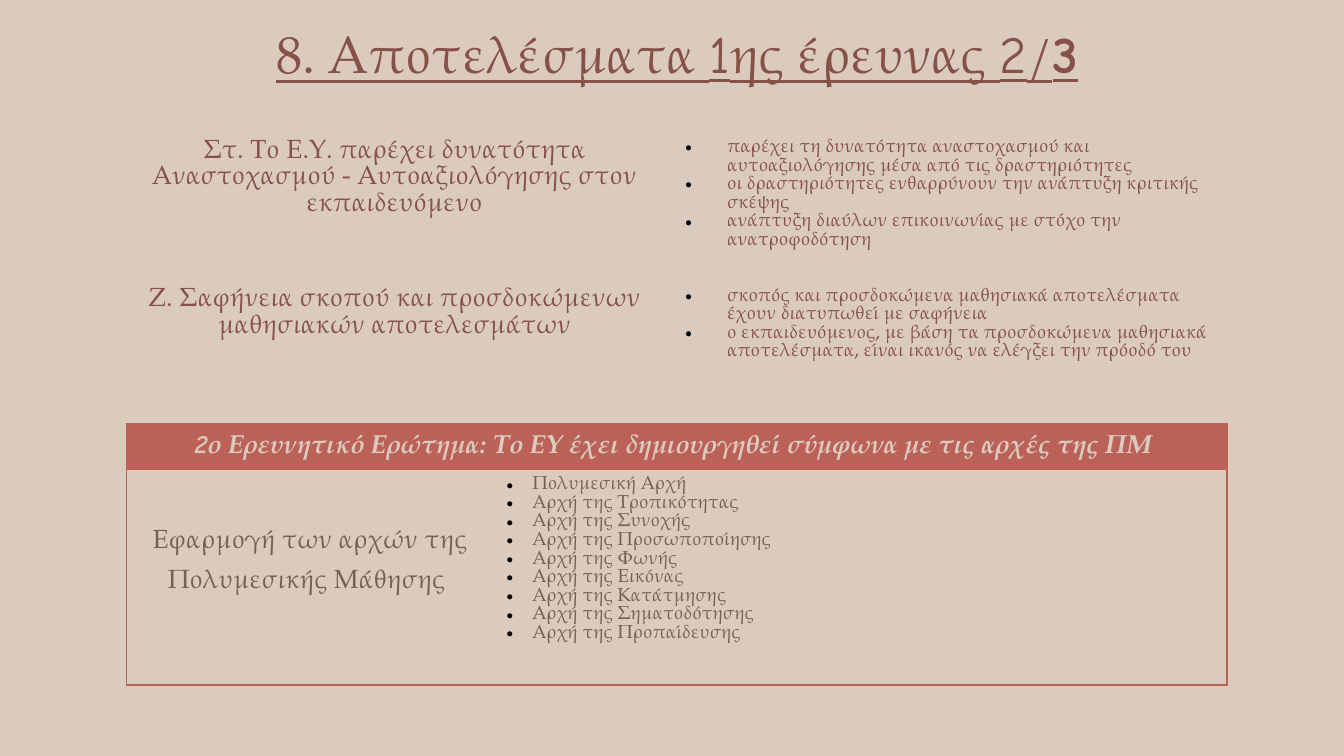
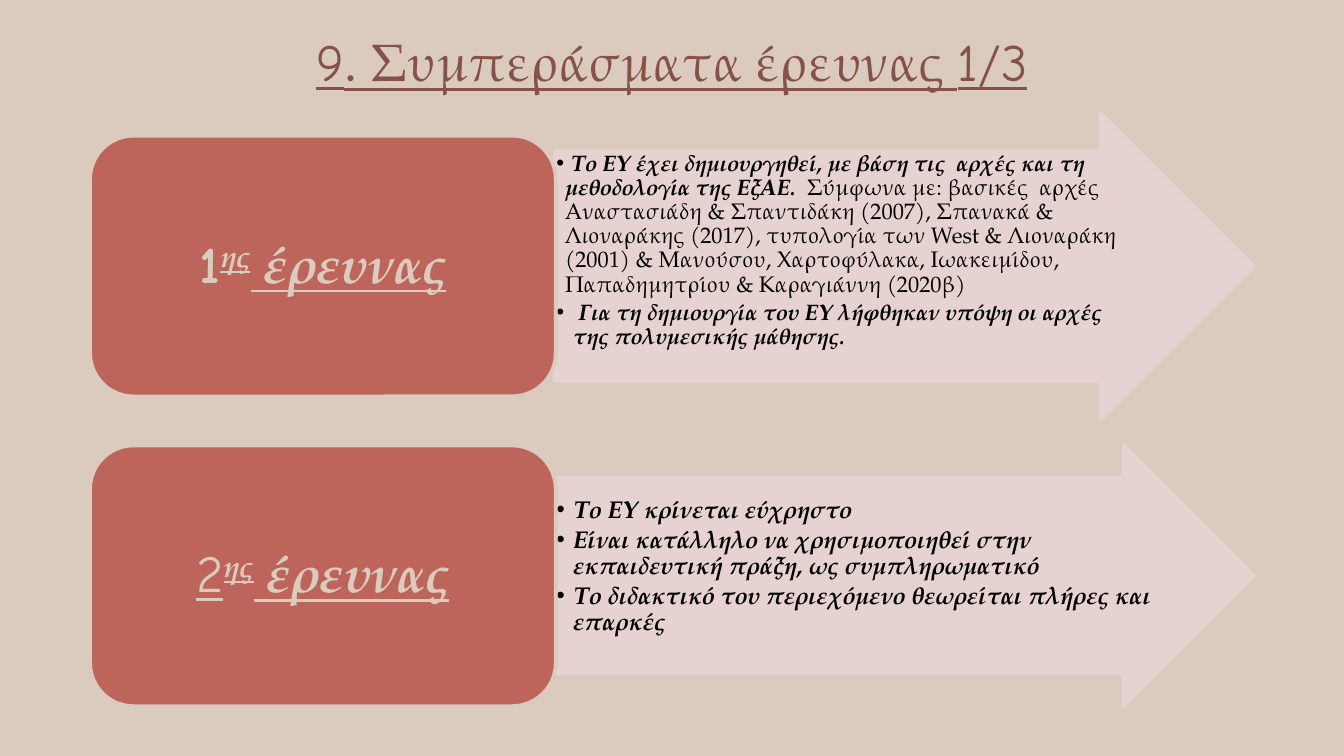
from dataclasses import dataclass, field
from typing import Optional

from lxml.etree import SubElement
from pptx import Presentation
from pptx.dml.color import RGBColor
from pptx.enum.shapes import MSO_SHAPE as Shape
from pptx.enum.text import MSO_ANCHOR as Anchor, MSO_AUTO_SIZE as AutoSize, PP_ALIGN as Align
from pptx.oxml.ns import qn
from pptx.util import Emu, Pt

PX = 4572
SERIF, COMIC = "TeX Gyre Pagella", "Comic Neue"
PLAIN_TABLE = "{2D5ABB26-0587-4C30-8999-92F81FD0307C}"
COLORS = {
    "sand": "DBCABE",
    "wine": "865147",
    "brown": "78604F",
    "rust": "BC6157",
    "brick": "BE655B",
    "blush": "E8D3D2",
    "black": "000000",
}


@dataclass
class Span:
    """A stretch of text with one look."""
    text: str
    font: str = SERIF
    bold: bool = False
    italic: bool = False
    underline: bool = False
    raised: bool = False


@dataclass
class Para:
    """A paragraph of spans sharing size and colour."""
    spans: list[Span]
    size: int
    color: str
    centered: bool = False
    indent: int = 0
    spacing: Optional[float] = None
    after: int = 0


@dataclass
class Finding:
    """One study: a rounded label and an arrow holding its conclusions."""
    top: int
    label: list[Span]
    arrow_top: int
    arrow_height: int
    text_top: int
    text_width: int
    text_height: int
    points: list[Para] = field(default_factory=list)


def px(value: int) -> Emu:
    """Turn px into EMU."""
    return Emu(value * PX)


def rgb(name: str) -> RGBColor:
    """Look up a named colour."""
    return RGBColor.from_string(COLORS[name])


def add_bullet(para, indent: int) -> None:
    """Give a paragraph a hanging black bullet."""
    props = para._p.get_or_add_pPr()
    props.set("marL", str(px(indent)))
    props.set("indent", str(px(-indent)))
    color = SubElement(props, qn("a:buClr"))
    SubElement(color, qn("a:srgbClr"), val=COLORS["black"])
    SubElement(props, qn("a:buFont"), typeface="Arial")
    SubElement(props, qn("a:buChar"), char="•")


def write(frame, paras: list[Para]) -> None:
    """Fill a text frame with paragraphs."""
    for number, spec in enumerate(paras):
        para = frame.add_paragraph() if number else frame.paragraphs[0]
        if spec.indent:
            add_bullet(para, spec.indent)
        para.alignment = Align.CENTER if spec.centered else Align.LEFT
        if spec.spacing:
            para.line_spacing = spec.spacing
        para.space_after = Pt(spec.after)
        for part in spec.spans:
            span = para.add_run()
            span.text = part.text
            font = span.font
            font.name, font.size = part.font, Pt(spec.size)
            font.bold, font.italic, font.underline = part.bold, part.italic, part.underline
            font.color.rgb = rgb(spec.color)
            if part.raised:
                span._r.get_or_add_rPr().set("baseline", "30000")


def add_text(page, at: tuple, paras: list[Para], margins: tuple = (20, 10),
             anchor=Anchor.TOP, grow: bool = False) -> None:
    """Add a wrapping text box."""
    frame = page.shapes.add_textbox(*map(px, at)).text_frame
    frame.word_wrap = True
    frame.auto_size = AutoSize.SHAPE_TO_FIT_TEXT if grow else AutoSize.NONE
    frame.margin_left = frame.margin_right = px(margins[0])
    frame.margin_top = frame.margin_bottom = px(margins[1])
    frame.vertical_anchor = anchor
    write(frame, paras)


def add_page(deck, at: tuple, title: list[Span]):
    """Add a sand page with its underlined title."""
    page = deck.slides.add_slide(deck.slide_layouts[6])
    page.background.fill.solid()
    page.background.fill.fore_color.rgb = rgb("sand")
    for span in title:
        span.underline = True
    add_text(page, at, [Para(title, 28, "wine", centered=True)], grow=True)
    return page


def add_block(page, kind, at: tuple, fill: str, line: str, alpha: int = 100):
    """Add a filled and outlined preset shape."""
    block = page.shapes.add_shape(kind, *map(px, at))
    block.shadow.inherit = False
    block.fill.solid()
    block.fill.fore_color.rgb = rgb(fill)
    block.line.color.rgb = rgb(line)
    block.line.width = Pt(2)
    if alpha < 100:
        for color in block._element.spPr.iter(qn("a:srgbClr")):
            SubElement(color, qn("a:alpha"), val=str(alpha * 1000))
    return block


def add_grid(page, at: tuple, columns: list[int], rows: list[int]):
    """Add a table without style, fills or borders."""
    width, height = sum(columns), sum(rows)
    grid = page.shapes.add_table(len(rows), len(columns), *map(px, (*at, width, height))).table
    grid.first_row = grid.horz_banding = False
    grid._tbl.tblPr.find(qn("a:tableStyleId")).text = PLAIN_TABLE
    for column, size in zip(grid.columns, columns):
        column.width = px(size)
    for row, size in zip(grid.rows, rows):
        row.height = px(size)
    for cell in grid.iter_cells():
        cell.fill.background()
    return grid


def add_borders(cell, sides: str) -> None:
    """Draw thin rust borders on the sides named by L, R, T, B."""
    props = cell._tc.get_or_add_tcPr()
    for place, side in enumerate(sides):
        line = SubElement(props, qn(f"a:ln{side}"), w=str(Pt(0.75)))
        fill = SubElement(line, qn("a:solidFill"))
        SubElement(fill, qn("a:srgbClr"), val=COLORS["rust"])
        props.insert(place, line)


def bullets(texts: list[str], color: str, indent: int) -> list[Para]:
    """Make small bulleted paragraphs for a table cell."""
    return [Para([Span(text)], 10, color, indent=indent) for text in texts]


def point(spans: list[Span], size: int, indent: int = 25, spacing: float = 0.9) -> Para:
    """Make one bulleted conclusion."""
    return Para(spans, size, "black", indent=indent, spacing=spacing, after=2)


def strong(text: str) -> Span:
    """Make a bold italic span."""
    return Span(text, bold=True, italic=True)


def label(number: Span) -> list[Span]:
    """Make the name of a study from its number."""
    return [number,
            Span("ης", bold=True, italic=True, underline=True, raised=True),
            Span(" έρευνας", bold=True, italic=True, underline=True)]


CRITERIA = [
    ("Στ. Το Ε.Υ. παρέχει δυνατότητα Αναστοχασμού - Αυτοαξιολόγησης στον εκπαιδευόμενο", [
        "παρέχει τη δυνατότητα αναστοχασμού και αυτοαξιολόγησης μέσα από τις δραστηριότητες",
        "οι δραστηριότητες ενθαρρύνουν την ανάπτυξη κριτικής σκέψης",
        "ανάπτυξη διαύλων επικοινωνίας με στόχο την ανατροφοδότηση"]),
    ("Ζ. Σαφήνεια σκοπού και προσδοκώμενων μαθησιακών αποτελεσμάτων", [
        "σκοπός και προσδοκώμενα μαθησιακά αποτελέσματα έχουν διατυπωθεί με σαφήνεια",
        "ο εκπαιδευόμενος, με βάση τα προσδοκώμενα μαθησιακά αποτελέσματα, "
        "είναι ικανός να ελέγξει την πρόοδό του"]),
]
PRINCIPLES = ["Πολυμεσική Αρχή"] + [f"Αρχή της {name}" for name in (
    "Τροπικότητας", "Συνοχής", "Προσωποποίησης", "Φωνής", "Εικόνας",
    "Κατάτμησης", "Σηματοδότησης", "Προπαίδευσης")]
FINDINGS = [
    Finding(202, label(Span("1", COMIC, bold=True)), 168, 456, 224, 868, 342, [
        point([strong(" Το ΕΥ έχει δημιουργηθεί, με βάση τις  αρχές και τη μεθοδολογία της ΕξΑΕ."),
               Span("  Σύμφωνα με: βασικές  αρχές Αναστασιάδη & Σπαντιδάκη (2007), Σπανακά & "
                    "Λιοναράκης (2017), τυπολογία των West & Λιοναράκη (2001) & Μανούσου, "
                    "Χαρτοφύλακα, Ιωακειμίδου, Παπαδημητρίου & Καραγιάννη (2020β)")], 12, indent=13),
        point([strong(" Για τη δημιουργία του ΕΥ λήφθηκαν υπόψη οι αρχές "
                      "της πολυμεσικής μάθησης.")], 12)]),
    Finding(663, label(Span("2", COMIC, underline=True)), 663, 388, 712, 894, 292, [
        point([strong("Το ΕΥ κρίνεται εύχρηστο")], 13, spacing=1.5),
        point([strong("Είναι κατάλληλο να χρησιμοποιηθεί στην εκπαιδευτική πράξη, "
                      "ως συμπληρωματικό")], 13),
        point([strong("Το διδακτικό του περιεχόμενο θεωρείται πλήρες και επαρκές")], 13)]),
]


def build_results(deck) -> None:
    """Build the page of results."""
    page = add_page(deck, (390, 22, 1236, 114), [
        Span("8. Αποτελέσματα "), Span("1", COMIC), Span("ης έρευνας "),
        Span("2", COMIC), Span("/"), Span("3", COMIC, bold=True)])
    criteria = add_grid(page, (174, 197), [826, 826], [221, 153])
    for row, (name, details) in enumerate(CRITERIA):
        write(criteria.cell(row, 0).text_frame, [Para([Span(name)], 14, "wine", centered=True)])
        write(criteria.cell(row, 1).text_frame, bullets(details, "wine", 62))

    question = add_grid(page, (188, 630), [546, 1092], [69, 320])
    header, name, details = question.cell(0, 0), question.cell(1, 0), question.cell(1, 1)
    header.merge(question.cell(0, 1))
    header.fill.solid()
    header.fill.fore_color.rgb = rgb("rust")
    write(header.text_frame, [Para([
        Span("2", COMIC, bold=True, italic=True),
        strong("ο Ερευνητικό Ερώτημα: Το ΕΥ έχει δημιουργηθεί σύμφωνα με τις αρχές της ΠΜ "),
    ], 14, "sand", centered=True)])
    name.margin_top = px(69)
    write(name.text_frame, [Para([Span("Εφαρμογή των αρχών της Πολυμεσικής Μάθησης ")],
                                 14, "brown", centered=True, spacing=1.5)])
    write(details.text_frame, bullets(PRINCIPLES, "brown", 38))
    for cell, sides in ((header, "LRT"), (question.cell(0, 1), "RT"), (name, "LTB"), (details, "RTB")):
        add_borders(cell, sides)


def build_conclusions(deck) -> None:
    """Build the page of conclusions."""
    page = add_page(deck, (410, 34, 1180, 114), [
        Span("9", COMIC), Span(". Συμπεράσματα έρευνας "), Span("1/3", COMIC)])
    for item in FINDINGS:
        arrow = add_block(page, Shape.RIGHT_ARROW, (826, item.arrow_top, 1040, item.arrow_height),
                          "blush", "blush", alpha=90)
        arrow.adjustments[0], arrow.adjustments[1] = 0.75, 0.5
        add_text(page, (826, item.text_top, item.text_width, item.text_height),
                 item.points, margins=(2, 2))
        add_block(page, Shape.ROUNDED_RECTANGLE, (134, item.top, 693, 388), "brick", "sand")
        add_text(page, (153, item.top + 19, 655, 350),
                 [Para(item.label, 28, "sand", centered=True, spacing=0.9)],
                 margins=(24, 12), anchor=Anchor.MIDDLE)


def main() -> None:
    """Build and save the deck."""
    deck = Presentation()
    deck.slide_width, deck.slide_height = px(2000), px(1125)
    build_results(deck)
    build_conclusions(deck)
    deck.save("out.pptx")


if __name__ == "__main__":
    main()
